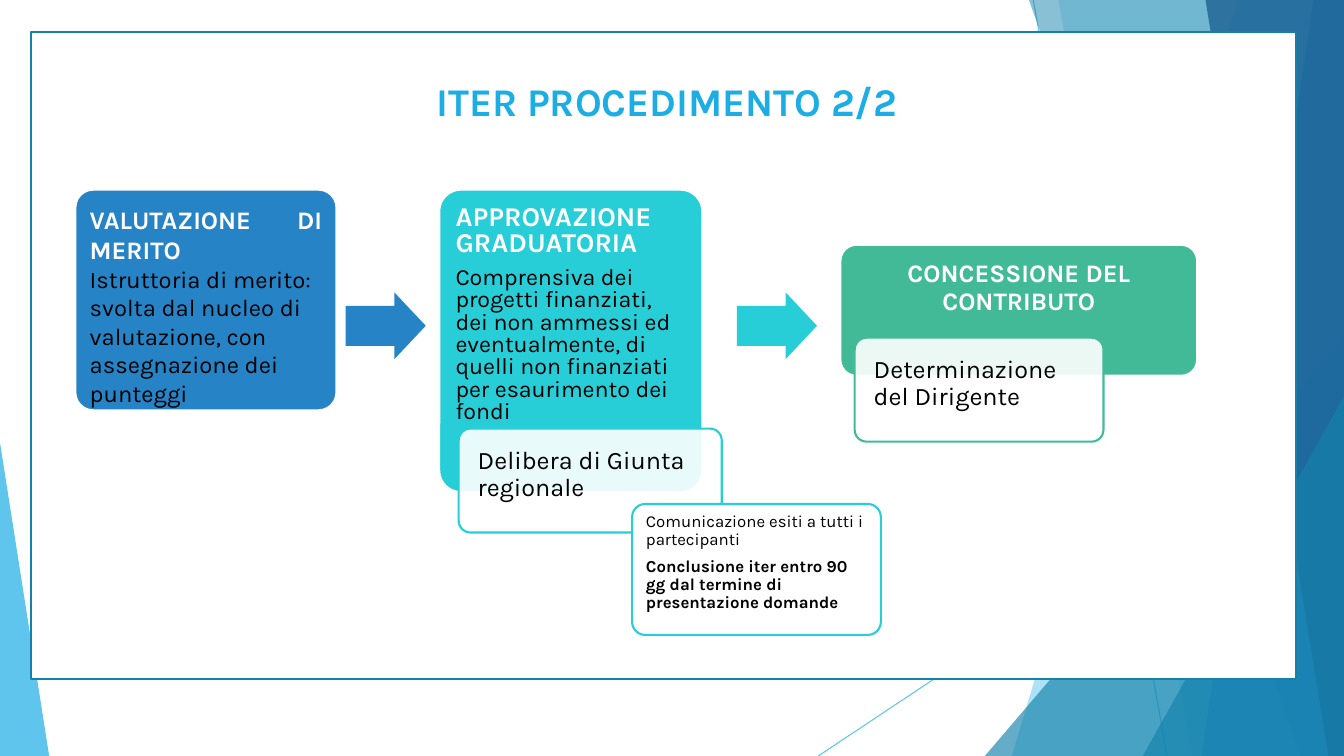
from dataclasses import dataclass

from lxml.etree import SubElement
from pptx import Presentation
from pptx.dml.color import RGBColor
from pptx.enum.shapes import MSO_CONNECTOR as Connector, MSO_SHAPE as Preset
from pptx.enum.text import MSO_ANCHOR as Anchor, PP_ALIGN as Align
from pptx.oxml.ns import qn
from pptx.util import Cm, Pt


@dataclass(frozen=True)
class Theme:
    font: str = "Karla"
    sky: str = "1CADE4"
    teal: str = "1482AC"
    frame: str = "1580A9"
    blue: str = "2683C6"
    navy: str = "1D6294"
    cyan: str = "27CED7"
    green: str = "42BA97"
    white: str = "FFFFFF"
    black: str = "000000"
    title: float = 28
    strong: float = 19.4
    heading: float = 18
    body: float = 17
    dense: float = 16.6
    small: float = 12
    outline: float = 1.5
    hairline: float = 0.75


@dataclass
class Line:
    text: str
    size: float
    color: str
    bold: bool = False
    align: Align = Align.LEFT
    spacing: float = 0.9
    after: float = 0


class SlideBuilder:
    def __init__(self, presentation, theme):
        self.theme = theme
        self.width = presentation.slide_width
        self.height = presentation.slide_height
        self.slide = presentation.slides.add_slide(presentation.slide_layouts[6])
        self.shapes = self.slide.shapes

    def set_alpha(self, color_format, color, alpha):
        color_format.rgb = RGBColor.from_string(color)
        if alpha < 100:
            element = color_format._xFill.find(qn("a:srgbClr"))
            SubElement(element, qn("a:alpha")).set("val", str(alpha * 1000))

    def paint(self, shape, fill, alpha=100, outline=None):
        shape.shadow.inherit = False
        shape.fill.solid()
        self.set_alpha(shape.fill.fore_color, fill, alpha)
        if outline:
            shape.line.color.rgb = RGBColor.from_string(outline)
            shape.line.width = Pt(self.theme.outline)
        else:
            shape.line.fill.background()

    def preset(self, kind, box, fill, alpha=100, outline=None, adjustments=()):
        shape = self.shapes.add_shape(kind, *map(Cm, box))
        for index, value in enumerate(adjustments):
            shape.adjustments[index] = value
        self.paint(shape, fill, alpha, outline)
        return shape

    def band(self, top_x, bottom_x, fill, alpha):
        builder = self.shapes.build_freeform(Cm(top_x), 0)
        builder.add_line_segments(
            [(self.width, 0), (self.width, self.height), (Cm(bottom_x), self.height)]
        )
        self.paint(builder.convert_to_shape(), fill, alpha)

    def ray(self, start, end, color, alpha):
        connector = self.shapes.add_connector(
            Connector.STRAIGHT, *map(Cm, start + end)
        )
        connector.line.width = Pt(self.theme.hairline)
        connector.line.fill.solid()
        self.set_alpha(connector.line.fill.fore_color, color, alpha)
        SubElement(connector._element.spPr, qn("a:effectLst"))

    def arrow(self, left, fill):
        self.preset(Preset.RIGHT_ARROW, (left, 7.37, 2.02, 1.68), fill,
                    adjustments=(0.6, 0.47))

    def add_lines(self, shape, lines, side, top):
        frame = shape.text_frame
        frame.word_wrap = True
        frame.vertical_anchor = Anchor.TOP
        frame.margin_left = frame.margin_right = Cm(side)
        frame.margin_top, frame.margin_bottom = Cm(top), 0
        for index, line in enumerate(lines):
            paragraph = frame.add_paragraph() if index else frame.paragraphs[0]
            paragraph.alignment = line.align
            paragraph.line_spacing = line.spacing
            paragraph.space_after = Pt(line.after)
            run = paragraph.add_run()
            run.text = line.text
            run.font.name = self.theme.font
            run.font.size = Pt(line.size)
            run.font.bold = line.bold
            run.font.color.rgb = RGBColor.from_string(line.color)

    def title(self, text):
        box = self.shapes.add_textbox(Cm(1.19), Cm(1.52), Cm(31.22), Cm(2.03))
        line = Line(text, self.theme.title, self.theme.sky, True, Align.CENTER)
        self.add_lines(box, [line], 0.56, 0.56)

    def card(self, box, radius, padding, fill, outline, lines, alpha=100):
        corner = radius / min(box[2:])
        shape = self.preset(Preset.ROUNDED_RECTANGLE, box, fill, alpha, outline, (corner,))
        corner_inset = 0.29 * radius
        side, top = (value - corner_inset for value in padding)
        self.add_lines(shape, lines, side, top)

    def note(self, box, outline, text):
        line = Line(text, self.theme.heading, self.theme.black)
        self.card(box, 0.3, (0.48, 0.48), self.theme.white, outline, [line], 90)


def draw_background(builder, theme):
    builder.ray((26.04, 0), (29.41, 19.05), theme.sky, 70)
    builder.ray((33.87, 10.24), (20.62, 19.05), theme.sky, 70)
    builder.band(31.19, 25.5, theme.sky, 36)
    builder.band(26.67, 30.05, theme.sky, 20)
    builder.preset(Preset.ISOSCELES_TRIANGLE, (24.82, 8.46, 9.05, 10.59),
                   theme.teal, 66, adjustments=(1,))
    builder.band(25.93, 32.79, theme.teal, 50)
    builder.band(33.1, 30.28, theme.blue, 70)
    builder.band(30.38, 33.48, theme.navy, 80)
    builder.preset(Preset.ISOSCELES_TRIANGLE, (28.8, 9.98, 5.07, 9.07),
                   theme.teal, 66, adjustments=(1,))
    builder.preset(Preset.ISOSCELES_TRIANGLE, (0, 11.15, 1.24, 7.9),
                   theme.sky, 70, adjustments=(0,))
    builder.preset(Preset.RECTANGLE, (0.79, 0.81, 31.88, 16.31),
                   theme.white, outline=theme.frame)


def draw_steps(builder, theme):
    builder.card((1.9, 4.78, 6.58, 5.56), 0.45, (0.36, 0.36), theme.blue, theme.white, [
        Line("VALUTAZIONE DI MERITO", theme.heading, theme.white, True, Align.JUSTIFY, 1),
        Line("Istruttoria di merito: svolta dal nucleo di valutazione, con "
             "assegnazione dei punteggi", theme.body, theme.black, spacing=1),
    ])
    builder.arrow(8.71, theme.blue)
    builder.card((11.07, 4.78, 6.63, 7.62), 0.55, (0.41, 0.41), theme.cyan, theme.white, [
        Line("APPROVAZIONE GRADUATORIA", theme.strong, theme.white, True,
             Align.JUSTIFY, 0.8, 6.8),
        Line("Comprensiva dei progetti finanziati, dei non ammessi ed eventualmente, "
             "di quelli non finanziati per esaurimento dei fondi",
             theme.dense, theme.black, spacing=0.8),
    ])
    builder.note((11.56, 10.8, 6.63, 2.62), theme.cyan, "Delibera di Giunta regionale")
    builder.arrow(18.57, theme.cyan)
    builder.card((21.18, 6.17, 8.99, 3.3), 0.4, (0.41, 0.41), theme.green, theme.white, [
        Line("CONCESSIONE DEL CONTRIBUTO", theme.heading, theme.white, True, Align.CENTER),
    ])
    builder.note((21.54, 8.51, 6.27, 2.62), theme.green, "Determinazione del Dirigente")
    builder.card((15.93, 12.7, 6.27, 3.3), 0.33, (0.35, 0.23), theme.white, theme.cyan, [
        Line("Comunicazione esiti a tutti i partecipanti", theme.small, theme.black, after=6),
        Line("Conclusione iter entro 90 gg dal termine di presentazione domande",
             theme.small, theme.black, True, after=6),
    ])


def main():
    presentation = Presentation()
    presentation.slide_width, presentation.slide_height = Cm(33.87), Cm(19.05)
    theme = Theme()
    builder = SlideBuilder(presentation, theme)
    draw_background(builder, theme)
    builder.title("ITER PROCEDIMENTO 2/2")
    draw_steps(builder, theme)
    presentation.save("out.pptx")


if __name__ == "__main__":
    main()
